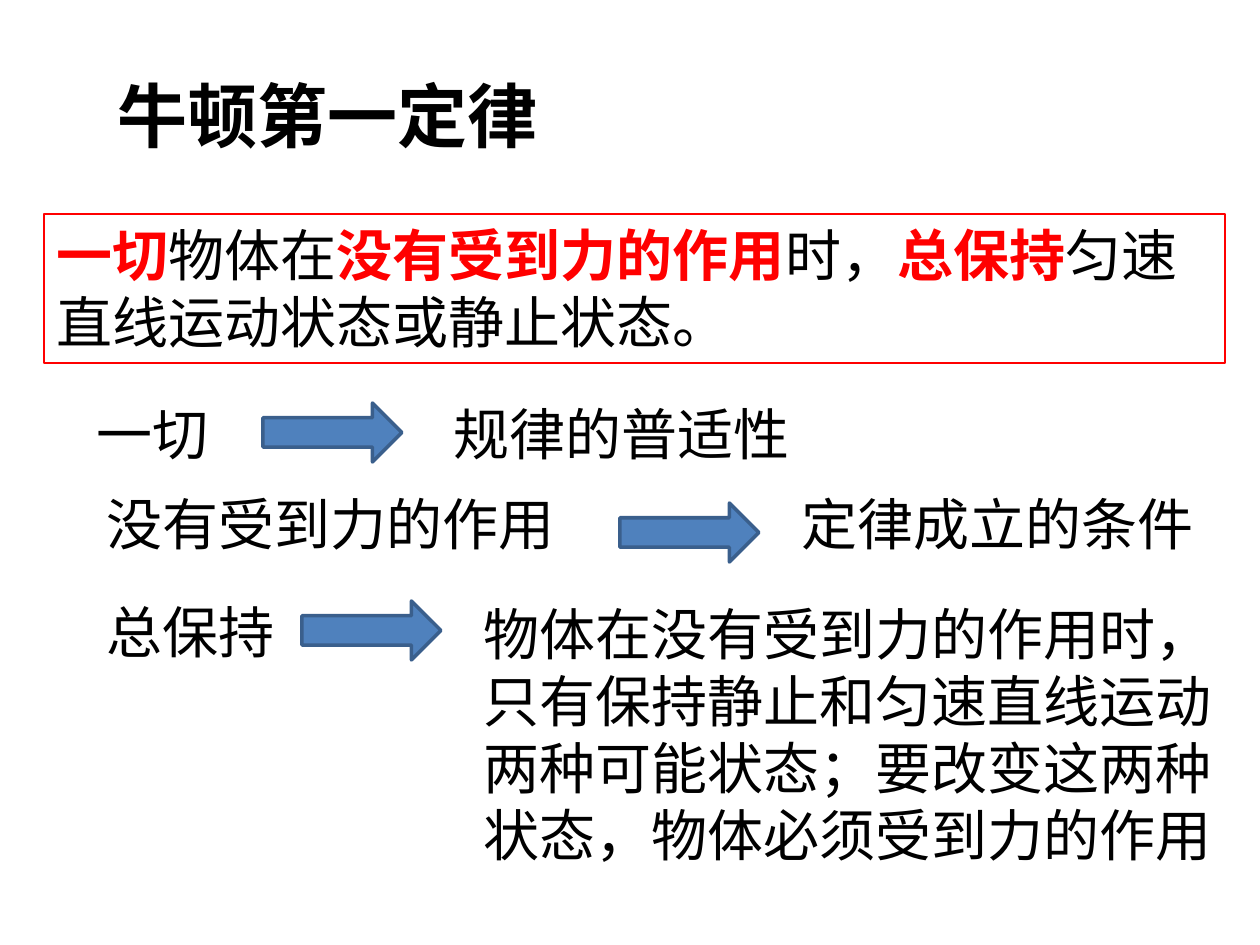
from dataclasses import dataclass

from lxml import etree
from pptx import Presentation
from pptx.dml.color import RGBColor
from pptx.enum.shapes import MSO_SHAPE
from pptx.enum.text import MSO_ANCHOR, MSO_AUTO_SIZE, PP_ALIGN
from pptx.oxml.ns import qn
from pptx.util import Emu, Pt

RECTANGLE, RIGHT_ARROW = MSO_SHAPE.RECTANGLE, MSO_SHAPE.RIGHT_ARROW
TOP, LEFT, NO_AUTOFIT = MSO_ANCHOR.TOP, PP_ALIGN.LEFT, MSO_AUTO_SIZE.NONE

FONT = "Noto Sans CJK SC"
BLACK, RED, BLUE, DARK_BLUE = "000000", "FF0000", "4F81BD", "3A5F8C"
BODY_SIZE, TITLE_SIZE = 32, 40
LINE_PITCH = 1.2  # line height relative to the text size
EMU_PER_PX = 914400 / 126
ARROW_W, ARROW_H = 139, 59


@dataclass
class Box:
    left: int
    top: int
    width: int
    height: int


@dataclass
class Span:
    text: str
    key: bool = False


@dataclass
class Point:
    """A phrase of the law, an arrow, and what the phrase means."""
    phrase: str
    phrase_box: Box
    arrow_left: int
    arrow_top: int
    meaning: str
    meaning_box: Box
    wrap: bool = False


def px(value: int) -> Emu:
    return Emu(round(value * EMU_PER_PX))


def color(value: str) -> RGBColor:
    return RGBColor.from_string(value)


def place(box: Box) -> list[Emu]:
    return [px(v) for v in (box.left, box.top, box.width, box.height)]


def style_run(run, size: int, tint: str, bold: bool) -> None:
    run.font.size = Pt(size)
    run.font.bold = bold
    run.font.color.rgb = color(tint)
    run.font.name = FONT
    # East Asian glyphs take their own typeface element
    latin = run.font._element.find(qn("a:latin"))
    east_asian = etree.Element(qn("a:ea"), typeface=FONT)
    latin.addnext(east_asian)


def set_frame(shape, size: int, wrap: bool) -> None:
    frame = shape.text_frame
    frame.word_wrap = wrap
    frame.auto_size = NO_AUTOFIT
    frame.vertical_anchor = TOP
    frame.paragraphs[0].alignment = LEFT
    frame.paragraphs[0].line_spacing = Pt(size * LINE_PITCH)


def add_text(slide, text: str, box: Box, wrap: bool) -> None:
    label = slide.shapes.add_textbox(*place(box))
    label.text_frame.text = text
    set_frame(label, BODY_SIZE, wrap)
    style_run(label.text_frame.paragraphs[0].runs[0], BODY_SIZE, BLACK, False)


def add_title(slide, text: str, box: Box) -> None:
    title = slide.shapes.title
    title.left, title.top, title.width, title.height = place(box)
    title.text_frame.text = text
    set_frame(title, TITLE_SIZE, False)
    style_run(title.text_frame.paragraphs[0].runs[0], TITLE_SIZE, BLACK, True)


def add_law(slide, spans: list[Span], box: Box) -> None:
    law = slide.shapes.add_shape(RECTANGLE, *place(box))
    law.shadow.inherit = False
    law.fill.background()
    law.line.color.rgb = color(RED)
    law.line.width = Pt(0.75)
    set_frame(law, BODY_SIZE, True)
    for span in spans:
        run = law.text_frame.paragraphs[0].add_run()
        run.text = span.text
        style_run(run, BODY_SIZE, RED if span.key else BLACK, span.key)


def add_arrow(slide, left: int, top: int) -> None:
    arrow = slide.shapes.add_shape(
        RIGHT_ARROW, *place(Box(left, top, ARROW_W, ARROW_H)))
    arrow.shadow.inherit = False
    arrow.fill.solid()
    arrow.fill.fore_color.rgb = color(BLUE)
    arrow.line.color.rgb = color(DARK_BLUE)
    arrow.line.width = Pt(2)


def add_point(slide, point: Point) -> None:
    add_text(slide, point.phrase, point.phrase_box, False)
    add_arrow(slide, point.arrow_left, point.arrow_top)
    add_text(slide, point.meaning, point.meaning_box, point.wrap)


LAW = [
    Span("一切", True),
    Span("物体在"),
    Span("没有受到力的作用", True),
    Span("时，"),
    Span("总保持", True),
    Span("匀速直线运动状态或静止状态。"),
]

POINTS = [
    Point("一切", Box(84, 393, 139, 81), 263, 403,
          "规律的普适性", Box(441, 393, 364, 81)),
    Point("没有受到力的作用", Box(94, 483, 478, 81), 620, 503,
          "定律成立的条件", Box(789, 483, 421, 81)),
    Point("总保持", Box(94, 591, 195, 81), 302, 601,
          "物体在没有受到力的作用时，只有保持静止和匀速直线运动两种可能状态；"
          "要改变这两种状态，物体必须受到力的作用",
          Box(471, 593, 764, 285), wrap=True),
]


def main() -> None:
    prs = Presentation()
    prs.slide_width, prs.slide_height = px(1260), px(945)
    slide = prs.slides.add_slide(prs.slide_layouts[5])

    # Title and the statement of the law
    add_title(slide, "牛顿第一定律", Box(105, 66, 451, 97))
    add_law(slide, LAW, Box(44, 214, 1181, 149))

    # Phrase-by-phrase reading
    for point in POINTS:
        add_point(slide, point)

    prs.save("out.pptx")


if __name__ == "__main__":
    main()
